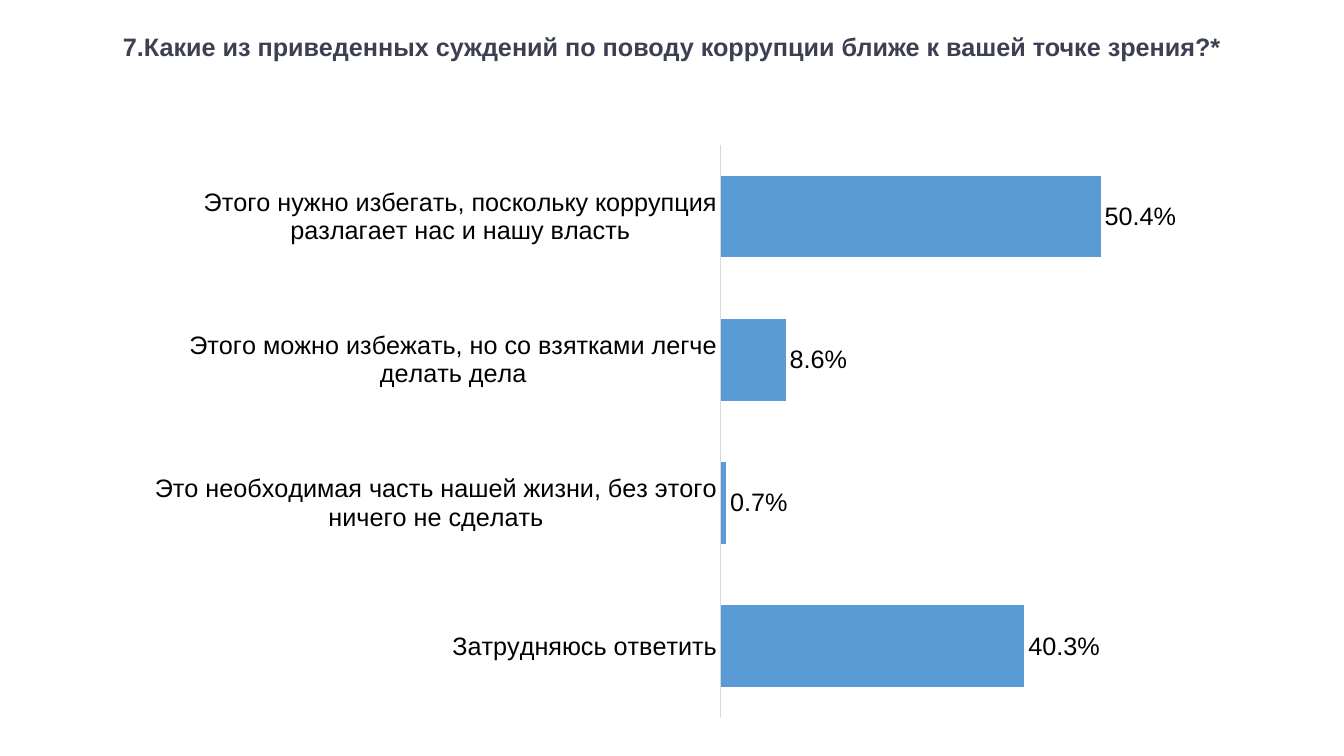
from lxml.etree import SubElement
from pptx import Presentation
from pptx.chart.data import CategoryChartData
from pptx.dml.color import RGBColor
from pptx.enum.chart import XL_CHART_TYPE as CHART, XL_LABEL_POSITION as LABEL, XL_TICK_MARK as TICK
from pptx.enum.text import MSO_ANCHOR, PP_ALIGN
from pptx.oxml.ns import qn
from pptx.util import Pt

EMU_PER_PX = 12192000 / 1344
FONT = "Arial"
PERCENT = "0.0%"
ANSWERS = {
    "Затрудняюсь ответить": 0.403,
    "Это необходимая часть нашей жизни, без этого ничего не сделать": 0.007,
    "Этого можно избежать, но со взятками легче делать дела": 0.086,
    "Этого нужно избегать, поскольку коррупция разлагает нас и нашу власть": 0.504,
}


def px(*lengths):
    return [round(n * EMU_PER_PX) for n in lengths]


def color(value):
    return RGBColor.from_string(value)


def style_font(font, size=18, fill="000000", bold=False):
    font.name, font.size, font.bold = FONT, Pt(size), bold
    font.color.rgb = color(fill)


def add_text(s, text, box, align=PP_ALIGN.CENTER, spacing=1.07, **font):
    tf = s.shapes.add_textbox(*px(*box)).text_frame
    tf.word_wrap = True
    tf.vertical_anchor = MSO_ANCHOR.TOP
    p = tf.paragraphs[0]
    p.alignment, p.line_spacing = align, spacing
    r = p.add_run()
    r.text = text
    style_font(r.font, **font)


def place_plot(chart, box, plot):
    """Fix the inner plot area; both boxes are in slide px."""
    area = chart._chartSpace.chart.plotArea
    for old in area.findall(qn("c:layout")):
        area.remove(old)
    layout = area.makeelement(qn("c:layout"))
    area.insert(0, layout)
    manual = SubElement(layout, qn("c:manualLayout"))
    left, top, width, height = box
    x, y, w, h = plot
    settings = {
        "layoutTarget": "inner", "xMode": "edge", "yMode": "edge",
        "x": (x - left) / width, "y": (y - top) / height,
        "w": w / width, "h": h / height,
    }
    for tag, value in settings.items():
        SubElement(manual, qn(f"c:{tag}")).set("val", str(value))


def add_bar_chart(s, answers, box, plot_box, fill, maximum):
    data = CategoryChartData(number_format=PERCENT)
    data.categories = list(answers)
    data.add_series("Series 1", list(answers.values()))
    chart = s.shapes.add_chart(CHART.BAR_CLUSTERED, *px(*box), data).chart
    chart.has_legend = chart.has_title = False
    style_font(chart.font)
    place_plot(chart, box, plot_box)

    axis = chart.category_axis
    axis.major_tick_mark = axis.minor_tick_mark = TICK.NONE
    axis.format.line.color.rgb = color("D9D9D9")
    axis.format.line.width = Pt(0.75)
    style_font(axis.tick_labels.font)

    values = chart.value_axis
    values.minimum_scale, values.maximum_scale = 0, maximum
    values.has_major_gridlines = values.visible = False

    plot = chart.plots[0]
    plot.gap_width, plot.vary_by_categories = 75, False
    bars = plot.series[0]
    bars.format.fill.solid()
    bars.format.fill.fore_color.rgb = color(fill)
    labels = bars.data_labels
    labels.show_value = True
    labels.position = LABEL.OUTSIDE_END
    labels.number_format, labels.number_format_is_linked = PERCENT, False
    style_font(labels.font)


def main():
    prs = Presentation()
    prs.slide_width, prs.slide_height = px(1344, 756)
    s = prs.slides.add_slide(prs.slide_layouts[6])
    add_text(s, "7.Какие из приведенных суждений по поводу коррупции ближе к вашей точке зрения?*",
             (82, 24, 1180, 43), fill="3C4052", bold=True)
    add_bar_chart(s, ANSWERS, box=(134, 133, 1061, 598), plot_box=(721, 145, 452, 573),
                  fill="5B9BD5", maximum=0.6)
    prs.save("out.pptx")


if __name__ == "__main__":
    main()
